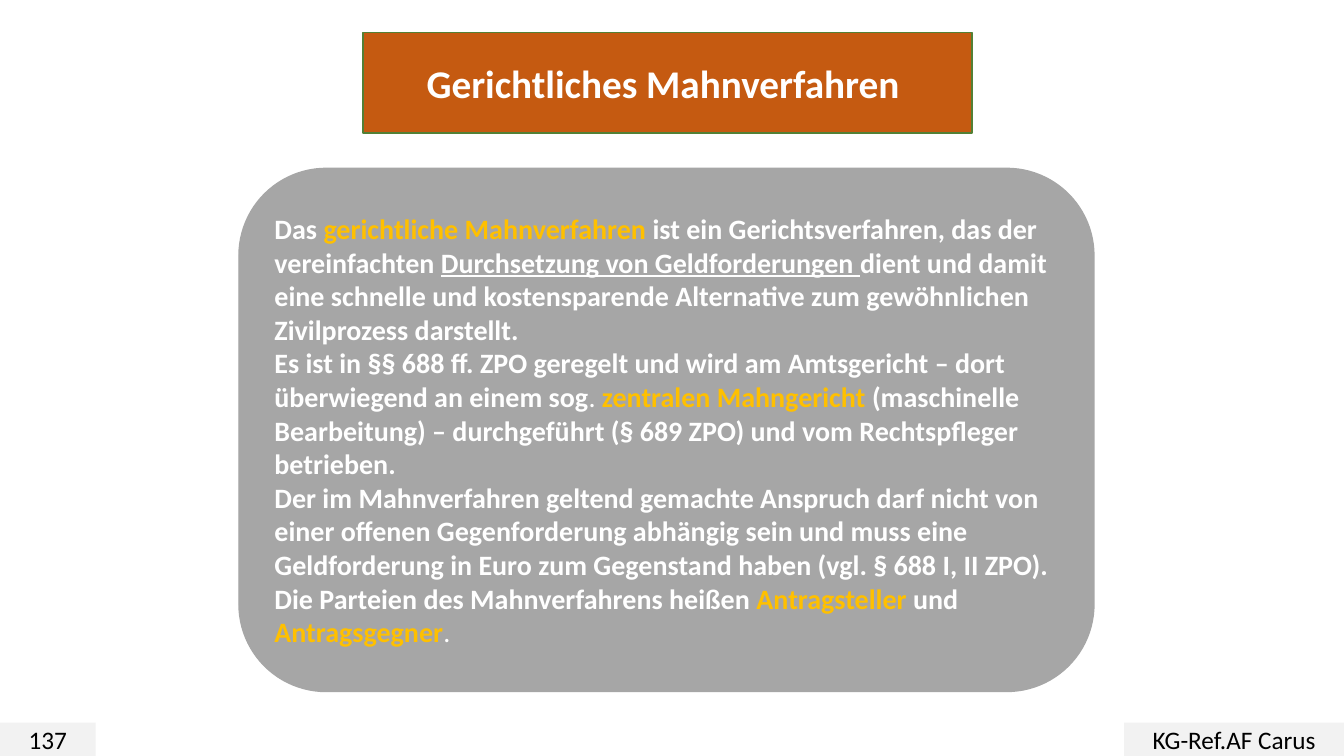
from pptx import Presentation
from pptx.dml.color import RGBColor
from pptx.enum.shapes import MSO_SHAPE
from pptx.enum.text import MSO_ANCHOR, MSO_AUTO_SIZE, PP_ALIGN
from pptx.oxml import parse_xml
from pptx.oxml.ns import nsdecls
from pptx.util import Pt

ROUNDED, RECT = MSO_SHAPE.ROUNDED_RECTANGLE, MSO_SHAPE.RECTANGLE
MIDDLE, NO_FIT = MSO_ANCHOR.MIDDLE, MSO_AUTO_SIZE.NONE
LEFT, CENTER = PP_ALIGN.LEFT, PP_ALIGN.CENTER

PX = 9144  # 100 px to the inch
WIDTH, HEIGHT = 1333, 750
FONT = "Calibri"
COLORS = {
    "white": "FFFFFF", "black": "000000", "orange": "C55A11", "green": "538035",
    "panel": "A6A6A6", "gold": "FFC000", "footer": "F2F2F2",
}

# Each run: text and its style
PARAGRAPHS = [
    [("Das ", "body"), ("gerichtliche Mahnverfahren ", "key"),
     ("ist ein Gerichtsverfahren, das der vereinfachten ", "body"),
     ("Durchsetzung von Geldforderungen ", "underlined"),
     ("dient und damit eine schnelle und kostensparende Alternative zum "
      "gewöhnlichen Zivilprozess darstellt.", "body")],
    [("Es ist in §§ 688 ff. ZPO geregelt und wird am Amtsgericht – dort "
      "überwiegend an einem sog", "body"), (". ", "plain"),
     ("zentralen Mahngericht ", "key"),
     ("(maschinelle Bearbeitung) – durchgeführt (§ 689 ZPO) und vom "
      "Rechtspfleger betrieben.", "body")],
    [("Der im Mahnverfahren geltend gemachte Anspruch darf nicht von einer "
      "offenen Gegenforderung abhängig sein und muss eine Geldforderung in "
      "Euro zum Gegenstand haben (vgl. § 688 I, II ZPO).", "body")],
    [("Die Parteien des Mahnverfahrens heißen ", "body"),
     ("Antragsteller ", "key"), ("und ", "body"),
     ("Antragsgegner", "key"), (".", "plain")],
]


def rgb(name):
    return RGBColor.from_string(COLORS[name])


def paint(sp, fill, line=None):
    sp.fill.solid()
    sp.fill.fore_color.rgb = rgb(fill)
    if line:
        sp.line.color.rgb = rgb(line)
        sp.line.width = Pt(1)
    else:
        sp.line.fill.background()


def set_frame(tf):
    tf.word_wrap = True
    tf.auto_size = NO_FIT
    tf.vertical_anchor = MIDDLE


def style_run(r, size, color, bold=False, underline=False):
    r.font.name = FONT
    r.font.size = Pt(size)
    r.font.bold = bold
    r.font.underline = underline
    r.font.color.rgb = rgb(color)


def add_box(s, kind, box, fill, line=None):
    sp = s.shapes.add_shape(kind, *(v * PX for v in box))
    sp.shadow.inherit = False
    paint(sp, fill, line)
    set_frame(sp.text_frame)
    return sp


def set_label(tf, text, size, color, bold=False):
    tf.text = text
    p = tf.paragraphs[0]
    p.alignment = CENTER
    style_run(p.runs[0], size, color, bold)


def add_title(s, box):
    sp = s.shapes.title
    sp.left, sp.top, sp.width, sp.height = (v * PX for v in box)
    # Rounded outline for the placeholder
    sp.element.spPr.append(parse_xml(
        f'<a:prstGeom {nsdecls("a")} prst="roundRect"><a:avLst/></a:prstGeom>'))
    paint(sp, "orange", "green")
    set_frame(sp.text_frame)
    set_label(sp.text_frame, "Gerichtliches Mahnverfahren ", 28, "white", True)


def add_body(s, box):
    tf = add_box(s, ROUNDED, box, "panel", "panel").text_frame
    for i, runs in enumerate(PARAGRAPHS):
        p = tf.add_paragraph() if i else tf.paragraphs[0]
        p.alignment = LEFT
        for text, style in runs:
            r = p.add_run()
            r.text = text
            style_run(r, 20, "gold" if style == "key" else "white",
                      style != "plain", style == "underlined")


def add_footer(s, box):
    left, top, width, height = box
    name_width, number_width = 218, 95
    for text, x, w in [("KG-Ref.AF Carus", left + width - name_width, name_width),
                       ("137", left, number_width)]:
        sp = add_box(s, RECT, (x, top, w, height), "footer")
        set_label(sp.text_frame, text, 18, "black")


def main():
    prs = Presentation()
    prs.slide_width, prs.slide_height = WIDTH * PX, HEIGHT * PX
    s = prs.slides.add_slide(prs.slide_layouts[5])  # title only
    add_title(s, (360, 32, 604, 100))
    add_body(s, (237, 167, 848, 519))
    add_footer(s, (0, 717, WIDTH, 33))
    prs.save("out.pptx")


if __name__ == "__main__":
    main()
